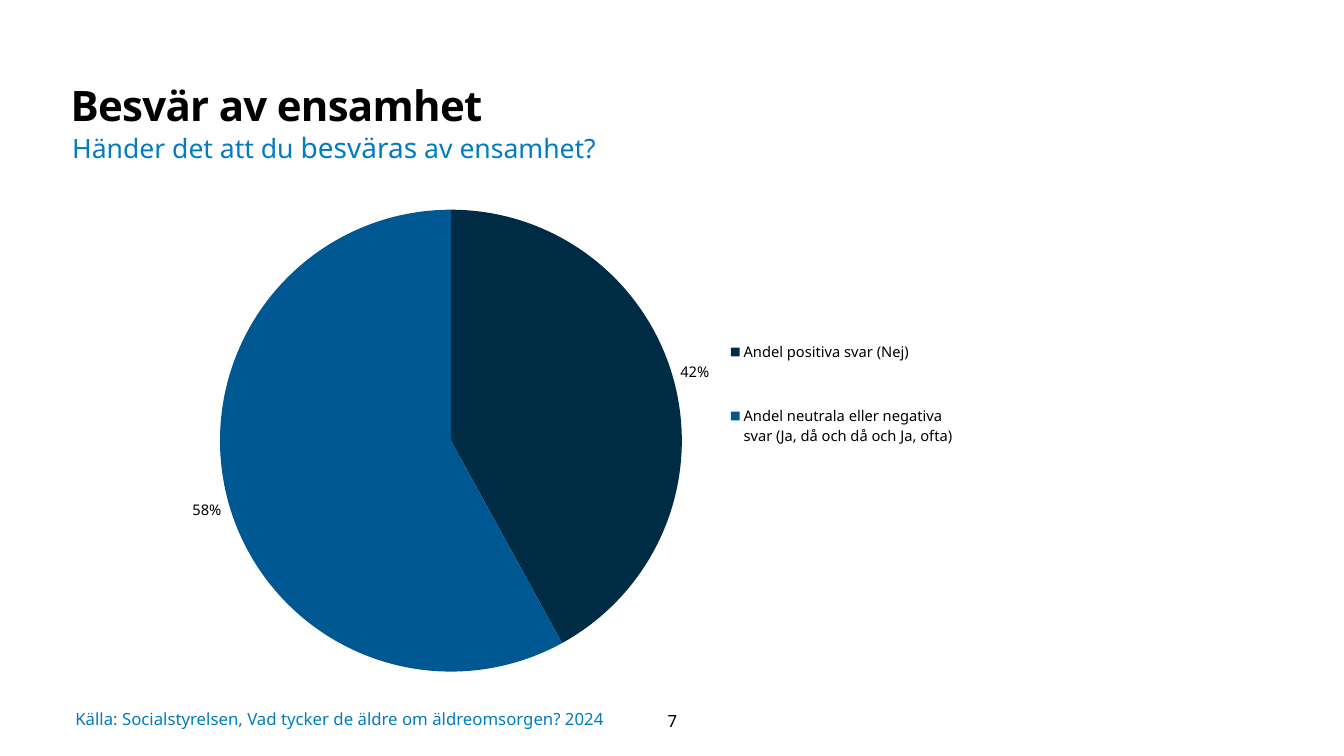
"""Build the slide on loneliness with its pie chart."""
from lxml.etree import SubElement
from pptx import Presentation
from pptx.chart.data import CategoryChartData as Data
from pptx.dml.color import RGBColor as RGB
from pptx.enum.chart import XL_CHART_TYPE as Kind, XL_LABEL_POSITION as Spot
from pptx.enum.chart import XL_LEGEND_POSITION as Side
from pptx.enum.text import MSO_ANCHOR as Anchor, PP_ALIGN as Align
from pptx.oxml.ns import qn
from pptx.util import Cm, Pt

BLACK = RGB(0x00, 0x00, 0x00)
SKY = RGB(0x01, 0x7C, 0xC1)
NAVY = RGB(0x00, 0x2B, 0x45)
BLUE = RGB(0x00, 0x58, 0x92)
FONT = "Noto Sans"


def style(font, size, color=BLACK, bold=False):
    for key, val in {"name": FONT, "size": Pt(size), "bold": bold}.items():
        setattr(font, key, val)
    font.color.rgb = color


def place(owner, inner, **parts):
    for old in owner.findall(qn("c:layout")):
        owner.remove(old)
    layout = SubElement(owner, qn("c:layout"))
    owner.remove(layout)
    owner.insert(0 if inner else 1, layout)
    manual = SubElement(layout, qn("c:manualLayout"))
    if inner:
        SubElement(manual, qn("c:layoutTarget")).set("val", "inner")
    for key in "xy":
        SubElement(manual, qn(f"c:{key}Mode")).set("val", "edge")
    for key, val in parts.items():
        SubElement(manual, qn(f"c:{key}")).set("val", str(val))


deck = Presentation()
deck.slide_width, deck.slide_height = Cm(33.87), Cm(19.05)
slide = deck.slides.add_slide(deck.slide_layouts[6])

pad = (0.25, 0.13, 0.25, 0.13)
texts = [
    ((1.78, 1.88, 27, 1.24), (0, 0, 0.25, 0.13), Anchor.TOP, Align.LEFT,
     BLACK, True, [("Besvär av ensamhet", 30)]),
    ((1.57, 3.15, 25.78, 1.12), pad, Anchor.TOP, Align.LEFT, SKY, False,
     [("Händer det att du ", 19), ("besväras", 20), (" av ensamhet?", 19)]),
    ((1.9, 17.75, 15, 0.74), (0, 0, 0, 0), Anchor.MIDDLE, Align.LEFT, SKY, False,
     [("Källa: Socialstyrelsen, Vad tycker de äldre om äldreomsorgen? 2024", 12)]),
    ((15.65, 17.65, 2.59, 1.02), pad, Anchor.MIDDLE, Align.CENTER, BLACK, False,
     [("7", 12)]),
]
for box, inset, anchor, align, color, bold, runs in texts:
    frame = slide.shapes.add_textbox(*map(Cm, box)).text_frame
    left, top, right, base = map(Cm, inset)
    form = {"word_wrap": True, "vertical_anchor": anchor, "margin_left": left,
            "margin_top": top, "margin_right": right, "margin_bottom": base}
    for key, val in form.items():
        setattr(frame, key, val)
    line = frame.paragraphs[0]
    line.alignment = align
    for words, size in runs:
        run = line.add_run()
        run.text = words
        style(run.font, size, color, bold)
        if bold:
            line.line_spacing = 1.1
            run.font._element.set("spc", "-50")

data = Data()
data.categories = ["Andel positiva svar (Nej)",
                   "Andel neutrala eller negativa svar (Ja, då och då och Ja, ofta)"]
data.add_series("Series 1", (42, 58))
area = map(Cm, (3.23, 4.5, 21.41, 13.08))
chart = slide.shapes.add_chart(Kind.PIE, *area, data).chart
style(chart.font, 10)
chart.has_title = False
chart.has_legend = True
legend = chart.legend
legend.position = Side.RIGHT
legend.include_in_layout = False
style(legend.font, 10.5)
place(legend._element, False, x=0.7, y=0.23, w=0.28, h=0.37)

plot = chart.plots[0]
place(plot._element.getparent(), True, x=0.09, y=0.06, w=0.58, h=0.89)
plot.vary_by_categories = True
for index, color in enumerate((NAVY, BLUE)):
    fill = plot.series[0].points[index].format.fill
    fill.solid()
    fill.fore_color.rgb = color
labels = plot.series[0].data_labels
form = {"show_value": False, "show_percentage": True, "position": Spot.OUTSIDE_END,
        "number_format": "0%", "number_format_is_linked": False}
for key, val in form.items():
    setattr(labels, key, val)
style(labels.font, 10.5)

deck.save("out.pptx")
